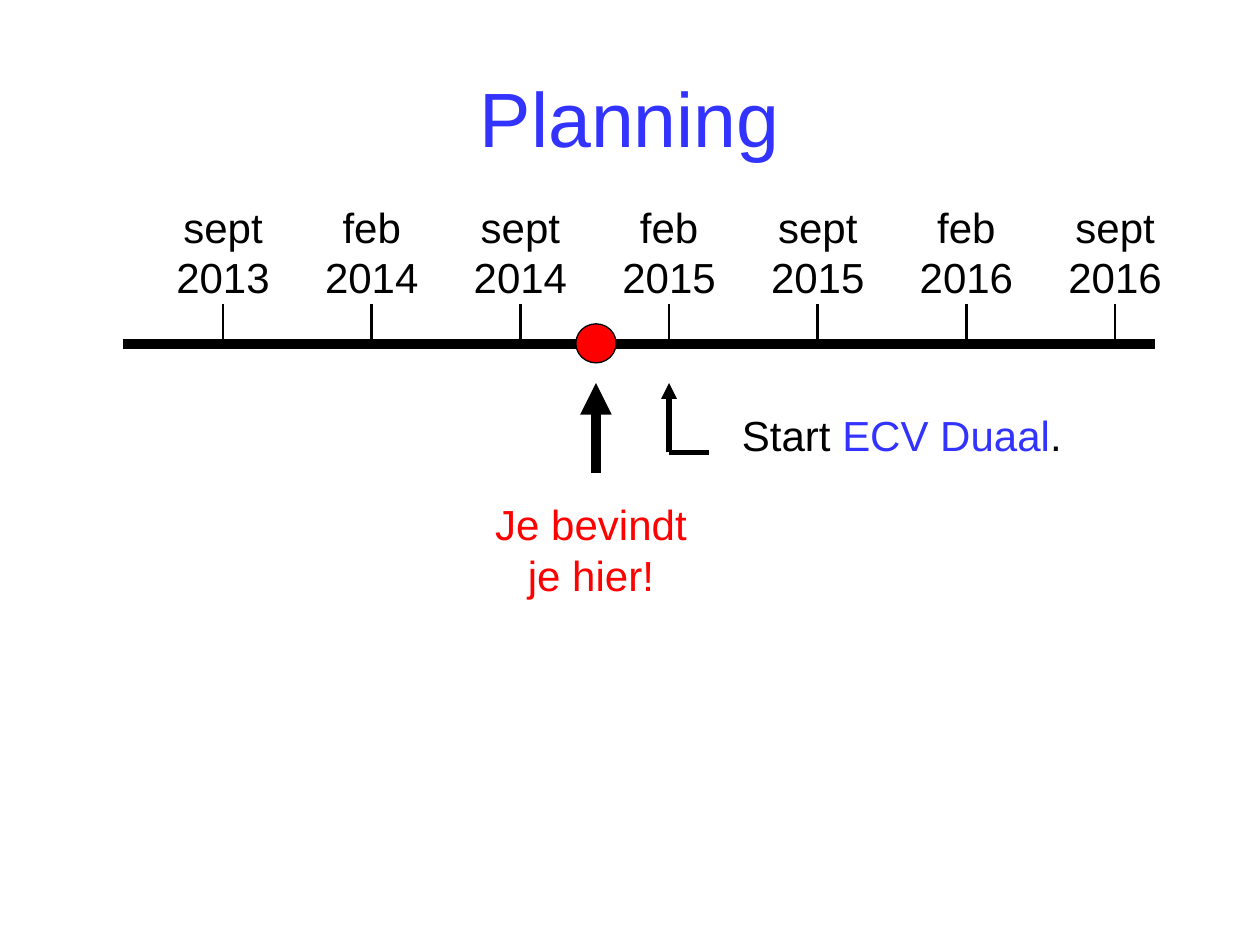
from lxml import etree
from pptx import Presentation, util as u
from pptx.dml.color import RGBColor
from pptx.enum import shapes, text
from pptx.oxml.ns import qn

BLACK, BLUE, RED = "000000", "3333FF", "FF0000"

presentation = Presentation()
presentation.slide_width, presentation.slide_height = u.Inches(10), u.Inches(7.5)
slide = presentation.slides.add_slide(presentation.slide_layouts[5])

# Timeline grid: one column per half year
FIRST, STEP = 1.77, 1.18
AXIS, TICK_TOP, ARROW_TOP = 2.73, 2.41, 3.04
NOW, START = 4.73, FIRST + 3 * STEP


def write(content, box, shape=None, size=24, color=BLACK, align=text.PP_ALIGN.CENTER,
          anchor=text.MSO_ANCHOR.TOP, wrap=True, fit=text.MSO_AUTO_SIZE.SHAPE_TO_FIT_TEXT):
    """Fill a text box; content is a string or a list of (string, color) runs."""
    box = [u.Inches(length) for length in box]
    shape = shape or slide.shapes.add_textbox(*box)
    shape.left, shape.top, shape.width, shape.height = box
    frame = shape.text_frame
    frame.word_wrap, frame.auto_size, frame.vertical_anchor = wrap, fit, anchor
    paragraph = frame.paragraphs[0]
    paragraph.alignment = align
    runs = [(content, color)] if isinstance(content, str) else content
    for words, run_color in runs:
        for number, line in enumerate(words.split("\n")):
            if number:
                paragraph.add_line_break()
            run = paragraph.add_run()
            run.text = line
            run.font.name, run.font.size = "Arial", u.Pt(size)
            run.font.color.rgb = RGBColor.from_string(run_color)


def draw_line(x1, y1, x2, y2, width, arrow=False):
    line = slide.shapes.add_connector(
        shapes.MSO_CONNECTOR.STRAIGHT, *[u.Inches(length) for length in (x1, y1, x2, y2)])
    line.line.color.rgb = RGBColor.from_string(BLACK)
    line.line.width = u.Pt(width)
    if arrow:
        etree.SubElement(line.line._get_or_add_ln(), qn("a:tailEnd"), type="triangle")
    etree.SubElement(line._element.spPr, qn("a:effectLst"))


# Title
write("Planning", (0.5, 0.3, 9, 1.25), shape=slide.shapes.title, size=44, color=BLUE,
      anchor=text.MSO_ANCHOR.MIDDLE, fit=text.MSO_AUTO_SIZE.NONE)

# Axis with dated ticks
draw_line(0.98, AXIS, 9.17, AXIS, 6)
dates = ["sept\n2013", "feb\n2014", "sept\n2014", "feb\n2015",
         "sept\n2015", "feb\n2016", "sept\n2016"]
for column, date in enumerate(dates):
    x = FIRST + column * STEP
    draw_line(x, AXIS, x, TICK_TOP, 1.5)
    write(date, (x - 0.475, 1.55, 0.95, 0.91), wrap=False)

# Current position
draw_line(NOW, 3.75, NOW, ARROW_TOP, 6, arrow=True)
marker = slide.shapes.add_shape(shapes.MSO_SHAPE.OVAL, u.Inches(NOW - 0.16), u.Inches(2.57),
                                u.Inches(0.32), u.Inches(0.31))
marker.shadow.inherit = False
marker.fill.solid()
marker.fill.fore_color.rgb = RGBColor.from_string(RED)
marker.line.color.rgb = RGBColor.from_string(BLACK)
marker.line.width = u.Pt(0.75)
write("Je bevindt je hier!", (3.78, 3.91, 1.82, 0.9), color=RED)

# Start of the programme
draw_line(START, 3.59, START, ARROW_TOP, 3, arrow=True)
draw_line(START, 3.59, START + 0.32, 3.59, 3)
write([("Start ", BLACK), ("ECV Duaal", BLUE), (".", BLACK)], (5.79, 3.2, 3.64, 0.5),
      align=text.PP_ALIGN.LEFT)

presentation.save("out.pptx")
